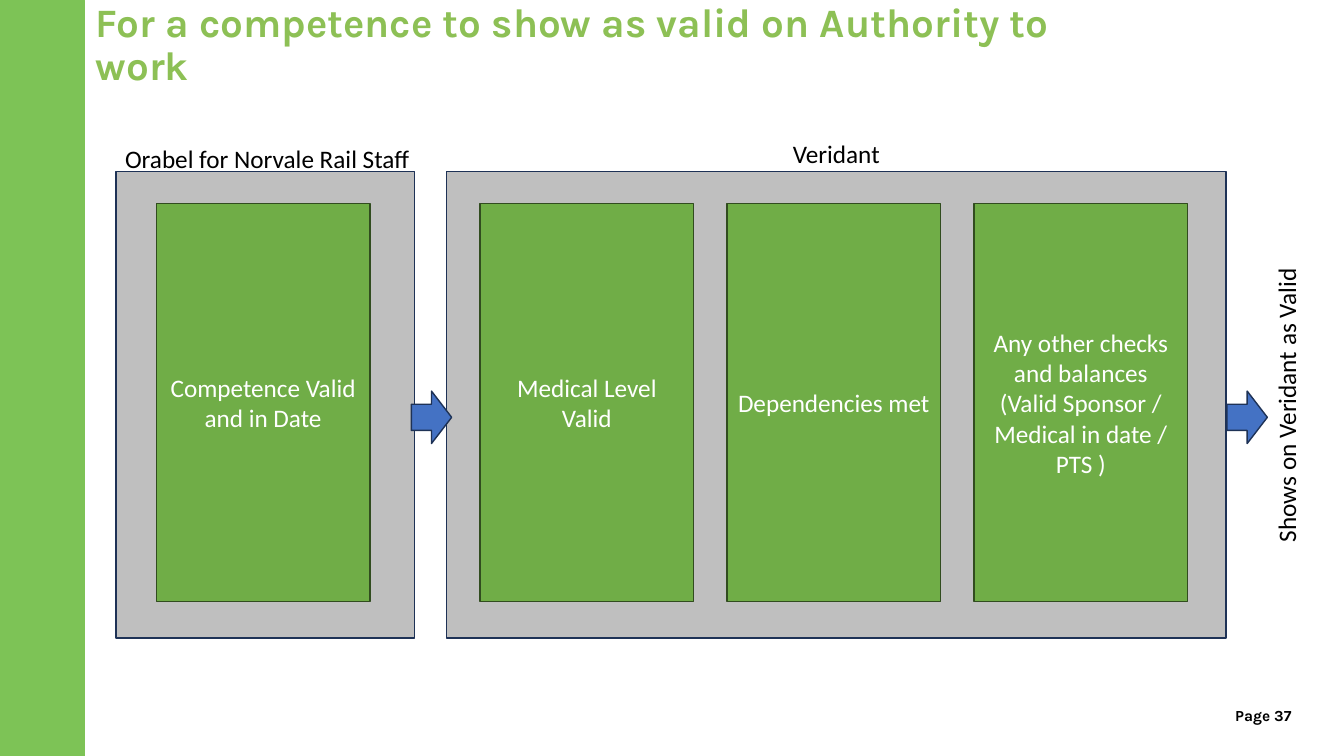
"""Build the slide showing how a competence becomes valid on Authority to work."""
from pptx import Presentation
from pptx.dml.color import RGBColor
from pptx.enum.shapes import MSO_SHAPE as Shape
from pptx.enum.text import MSO_ANCHOR as Anchor, PP_ALIGN as Align
from pptx.util import Inches, Pt


def add_block(preset, left, top, width, height, fill, line, line_width=1):
    """Add a filled, outlined preset shape without a shadow."""
    shape = slide.shapes.add_shape(
        preset, Inches(left), Inches(top), Inches(width), Inches(height))
    shape.shadow.inherit = False
    shape.fill.solid()
    shape.fill.fore_color.rgb = RGBColor.from_string(fill)
    shape.line.color.rgb = RGBColor.from_string(line)
    shape.line.width = Pt(line_width)
    return shape


def write_text(shape, text, color, size=18, name="Calibri", bold=False,
               align=Align.CENTER, anchor=Anchor.TOP):
    """Put one formatted paragraph in a shape and return the paragraph."""
    frame = shape.text_frame
    frame.text = text
    frame.word_wrap = True
    frame.vertical_anchor = anchor
    paragraph = frame.paragraphs[0]
    paragraph.alignment = align
    font = paragraph.runs[0].font
    font.size = Pt(size)
    font.name = name
    font.bold = bold
    font.color.rgb = RGBColor.from_string(color)
    return paragraph


presentation = Presentation()
presentation.slide_width = Inches(13.33)
presentation.slide_height = Inches(7.5)
slide = presentation.slides.add_slide(presentation.slide_layouts[6])

add_block(Shape.RECTANGLE, -0.01, 0, 0.85, 7.5, "7DC356", "7DC356", 0.5)

page_number = slide.shapes.add_textbox(
    Inches(11.72), Inches(7.01), Inches(1.62), Inches(0.19))
title = slide.shapes.add_textbox(
    Inches(0.95), Inches(0), Inches(10.32), Inches(0.91))
for box, vertical_margin in ((page_number, 0), (title, 0.05)):
    frame = box.text_frame
    frame.margin_left = frame.margin_right = Inches(0)
    frame.margin_top = frame.margin_bottom = Inches(vertical_margin)
write_text(page_number, "Page 37", "000000", 11, "Karla", True)
heading = write_text(
    title, "For a competence to show as valid on Authority to work",
    "8DC055", 28.8, "Karla", True, Align.LEFT, Anchor.MIDDLE)
heading.line_spacing = 0.9

for panel_left, panel_width in ((4.43, 7.73), (1.15, 2.96)):
    add_block(Shape.RECTANGLE, panel_left, 1.7, panel_width, 4.63, "BFBFBF", "1E3256")

right_panel_checks = [
    "Medical Level Valid",
    "Dependencies met",
    "Any other checks and balances (Valid Sponsor / Medical in date / PTS )",
]
checks = [(1.55, "Competence Valid and in Date")]
checks += [(4.76 + 2.45 * index, text) for index, text in enumerate(right_panel_checks)]
for check_left, text in checks:
    check = add_block(Shape.RECTANGLE, check_left, 2.02, 2.12, 3.95, "70AD47", "314C1F")
    write_text(check, text, "FFFFFF", anchor=Anchor.MIDDLE)

labels = [
    ("Orabel for Norvale Rail Staff", 1.03, 1.37, 3.24, 0),
    ("Veridant", 4.43, 1.32, 7.73, 0),
    ("Shows on Veridant as Valid", 10.44, 3.82, 4.63, 270),
]
for text, left, top, width, rotation in labels:
    label = slide.shapes.add_textbox(
        Inches(left), Inches(top), Inches(width), Inches(0.4))
    label.rotation = rotation
    write_text(label, text, "000000")

for arrow_left in (4.02, 12.11):
    arrow = add_block(Shape.DOWN_ARROW, arrow_left, 3.94, 0.52, 0.4, "4472C4", "1E3256")
    arrow.rotation = 270

presentation.save("out.pptx")
